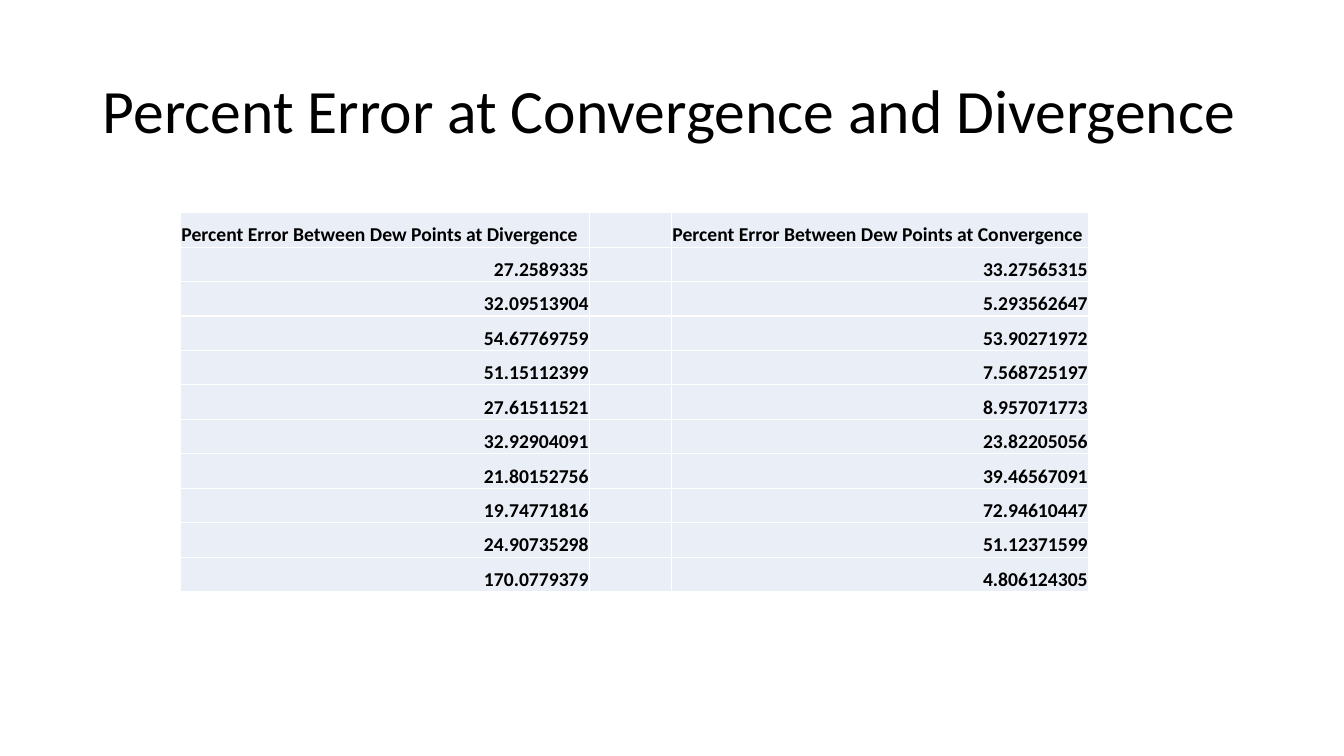
"""Build a slide with a table of dew point percent errors."""
from lxml import etree
from pptx import Presentation
from pptx import util as u
from pptx.dml.color import RGBColor
from pptx.enum import text
from pptx.oxml import ns

TITLE = "Percent Error at Convergence and Divergence"
HEADERS = (
    "Percent Error Between Dew Points at Divergence",
    "Percent Error Between Dew Points at Convergence",
)
ERRORS = [
    ("27.2589335", "33.27565315"),
    ("32.09513904", "5.293562647"),
    ("54.67769759", "53.90271972"),
    ("51.15112399", "7.568725197"),
    ("27.61511521", "8.957071773"),
    ("32.92904091", "23.82205056"),
    ("21.80152756", "39.46567091"),
    ("19.74771816", "72.94610447"),
    ("24.90735298", "51.12371599"),
    ("170.0779379", "4.806124305"),
]
COLORS = {"text": "000000", "cell": "EAEFF7", "border": "FFFFFF"}
FONT = "Calibri"
SLIDE_SIZE = (13.33, 7.5)
TITLE_BOX = (0.92, 0.4, 11.5, 1.45)
TABLE_LEFT, TABLE_TOP, TABLE_HEIGHT = 1.79, 2.11, 3.76
COLUMN_WIDTHS = (4.06, 0.81, 4.14)


def write(frame, words, size, bold=False, align=text.PP_ALIGN.LEFT,
          anchor=text.MSO_ANCHOR.MIDDLE, spacing=1.0):
    frame.word_wrap = True
    frame.vertical_anchor = anchor
    para = frame.paragraphs[0]
    para.alignment = align
    para.line_spacing = spacing
    span = para.add_run()
    span.text = words
    span.font.name = FONT
    span.font.size = u.Pt(size)
    span.font.bold = bold
    span.font.color.rgb = RGBColor.from_string(COLORS["text"])


def style_cell(cell):
    cell.margin_left = cell.margin_right = cell.margin_top = u.Inches(0.01)
    cell.margin_bottom = 0
    properties = cell._tc.get_or_add_tcPr()
    for side in ("lnL", "lnR", "lnT", "lnB"):
        line = etree.SubElement(properties, ns.qn(f"a:{side}"), w=str(u.Pt(1)))
        paint = etree.SubElement(line, ns.qn("a:solidFill"))
        etree.SubElement(paint, ns.qn("a:srgbClr"), val=COLORS["border"])
    cell.fill.solid()
    cell.fill.fore_color.rgb = RGBColor.from_string(COLORS["cell"])


def add_error_table(page):
    rows = [HEADERS] + ERRORS
    box = page.shapes.add_table(
        len(rows), len(COLUMN_WIDTHS), u.Inches(TABLE_LEFT), u.Inches(TABLE_TOP),
        u.Inches(sum(COLUMN_WIDTHS)), u.Inches(TABLE_HEIGHT))
    table = box.table
    for column, width in zip(table.columns, COLUMN_WIDTHS):
        column.width = u.Inches(width)
    for index, (divergence, convergence) in enumerate(rows):
        align = text.PP_ALIGN.RIGHT if index else text.PP_ALIGN.LEFT
        for column, words in enumerate((divergence, "", convergence)):
            cell = table.cell(index, column)
            style_cell(cell)
            if words:
                write(cell.text_frame, words, 14, bold=True, align=align)
                cell.vertical_anchor = text.MSO_ANCHOR.BOTTOM


def main():
    deck = Presentation()
    deck.slide_width, deck.slide_height = map(u.Inches, SLIDE_SIZE)
    page = deck.slides.add_slide(deck.slide_layouts[5])
    title = page.shapes.title
    title.left, title.top, title.width, title.height = map(u.Inches, TITLE_BOX)
    write(title.text_frame, TITLE, 44, spacing=0.9)
    add_error_table(page)
    deck.save("out.pptx")


if __name__ == "__main__":
    main()
